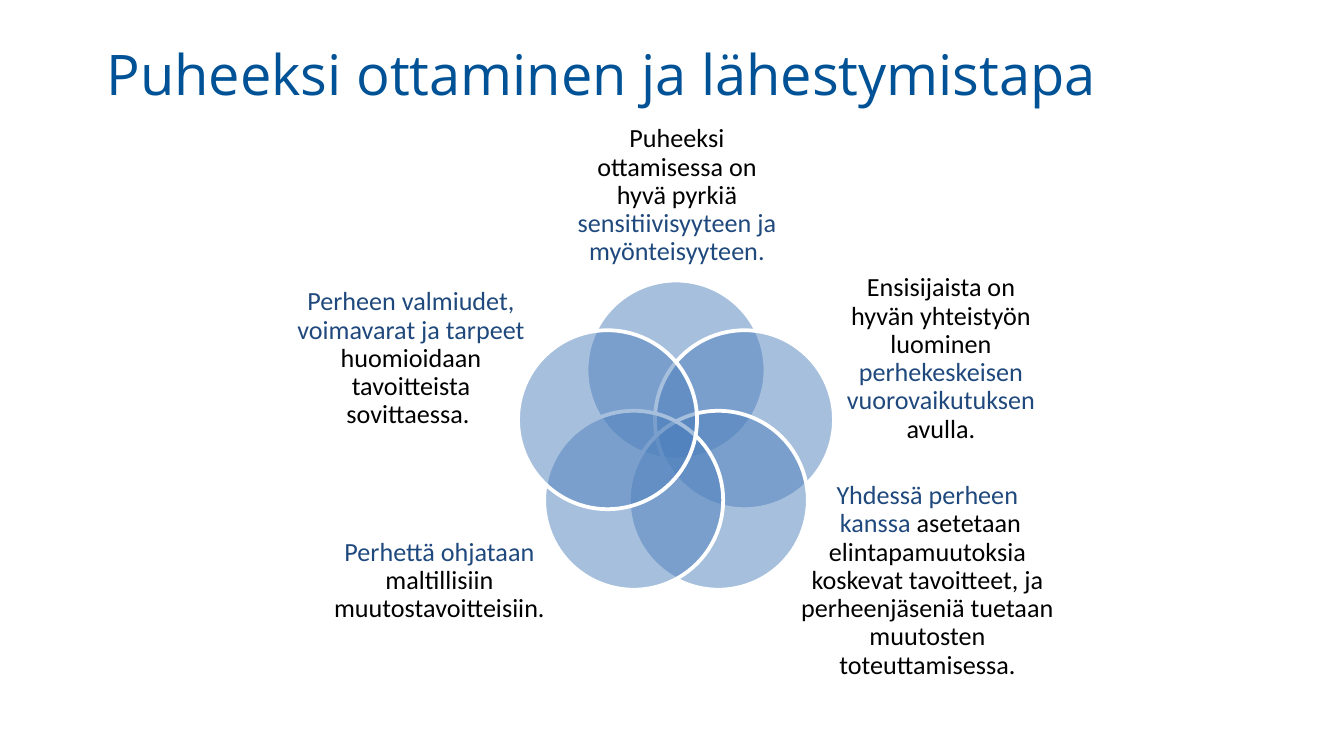
from dataclasses import dataclass
from math import cos, pi, sin

from lxml.etree import SubElement
from pptx import Presentation
from pptx.dml.color import RGBColor as RGB
from pptx.enum.shapes import MSO_SHAPE as Shape
from pptx.enum.text import MSO_ANCHOR as Anchor, MSO_AUTO_SIZE as AutoSize, PP_ALIGN as Align
from pptx.oxml.ns import qn
from pptx.util import Emu, Pt

PX_PER_INCH = 134.4


@dataclass(frozen=True)
class Theme:
    title: RGB = RGB(0x00, 0x52, 0x96)
    text: RGB = RGB(0x00, 0x00, 0x00)
    accent: RGB = RGB(0x1F, 0x49, 0x7D)
    circle: RGB = RGB(0x4F, 0x81, 0xBD)
    outline: RGB = RGB(0xFF, 0xFF, 0xFF)
    opacity: int = 50
    outline_width: int = 2
    title_font: str = "Open Sans"
    body_font: str = "Calibri"
    title_size: int = 30
    body_size: int = 14


THEME = Theme()

# Circle ring: centre, distance from it to each circle's centre, diameter
RING_X, RING_Y, RING_RADIUS, DIAMETER = 676, 442, 72, 179

# Clockwise from the top: label box (left, top, width, height), then (text, colour) runs
PRINCIPLES = [
    ((573, 136, 208, 120), [
        ("Puheeksi ottamisessa on hyvä pyrkiä ", THEME.text),
        ("sensitiivisyyteen ja myönteisyyteen.", THEME.accent)]),
    ((836, 294, 210, 130), [
        ("Ensisijaista on hyvän yhteistyön luominen ", THEME.text),
        ("perhekeskeisen vuorovaikutuksen ", THEME.accent),
        ("avulla.", THEME.text)]),
    ((792, 516, 271, 130), [
        ("Yhdessä perheen\n kanssa ", THEME.accent),
        ("asetetaan elintapamuutoksia koskevat tavoitteet, ja "
         "perheenjäseniä tuetaan muutosten toteuttamisessa.", THEME.text)]),
    ((332, 516, 215, 130), [
        ("Perhettä ohjataan ", THEME.accent),
        ("maltillisiin muutostavoitteisiin.", THEME.text)]),
    ((296, 294, 230, 130), [
        ("Perheen valmiudet, voimavarat ja tarpeet ", THEME.accent),
        ("huomioidaan tavoitteista sovittaessa. ", THEME.text)]),
]


def px(n):
    return Emu(round(n * 914400 / PX_PER_INCH))


def write(tf, runs, *, font, size, align, spacing=1.0):
    """Fill the first paragraph with (text, colour) runs; a newline is a line break."""
    tf.word_wrap = True
    tf.auto_size = AutoSize.NONE
    tf.vertical_anchor = Anchor.MIDDLE
    p = tf.paragraphs[0]
    p.alignment = align
    p.line_spacing = spacing
    for text, color in runs:
        for i, line in enumerate(text.split("\n")):
            if i:
                p.add_line_break()
            r = p.add_run()
            r.text = line
            r.font.name = font
            r.font.size = Pt(size)
            r.font.color.rgb = color


def add_title(s, text):
    sp = s.shapes.title
    sp.left, sp.top, sp.width, sp.height = map(px, (93, 32, 1159, 82))
    write(sp.text_frame, [(text, THEME.title)], font=THEME.title_font,
          size=THEME.title_size, align=Align.LEFT)


def add_circle(shapes, x, y):
    """Draw a translucent circle centred on (x, y)."""
    sp = shapes.add_shape(Shape.OVAL, px(x - DIAMETER / 2), px(y - DIAMETER / 2),
                          px(DIAMETER), px(DIAMETER))
    sp.shadow.inherit = False
    sp.fill.solid()
    sp.fill.fore_color.rgb = THEME.circle
    clr = sp.fill._xPr.find(qn("a:solidFill")).find(qn("a:srgbClr"))
    SubElement(clr, qn("a:alpha")).set("val", str(THEME.opacity * 1000))
    sp.line.color.rgb = THEME.outline
    sp.line.width = Pt(THEME.outline_width)


def add_label(shapes, box, runs):
    tf = shapes.add_textbox(*map(px, box)).text_frame
    tf.margin_left = tf.margin_right = tf.margin_top = tf.margin_bottom = 0
    write(tf, runs, font=THEME.body_font, size=THEME.body_size,
          align=Align.CENTER, spacing=0.9)


def add_venn(s, principles):
    shapes = s.shapes.add_group_shape().shapes
    for i, (box, runs) in enumerate(principles):
        angle = 2 * pi * i / len(principles)
        add_circle(shapes, RING_X + RING_RADIUS * sin(angle),
                   RING_Y - RING_RADIUS * cos(angle))
        add_label(shapes, box, runs)


def main():
    prs = Presentation()
    prs.slide_width, prs.slide_height = px(1344), px(756)
    s = prs.slides.add_slide(prs.slide_layouts[5])
    add_title(s, "Puheeksi ottaminen ja lähestymistapa")
    add_venn(s, PRINCIPLES)
    prs.save("out.pptx")


if __name__ == "__main__":
    main()
